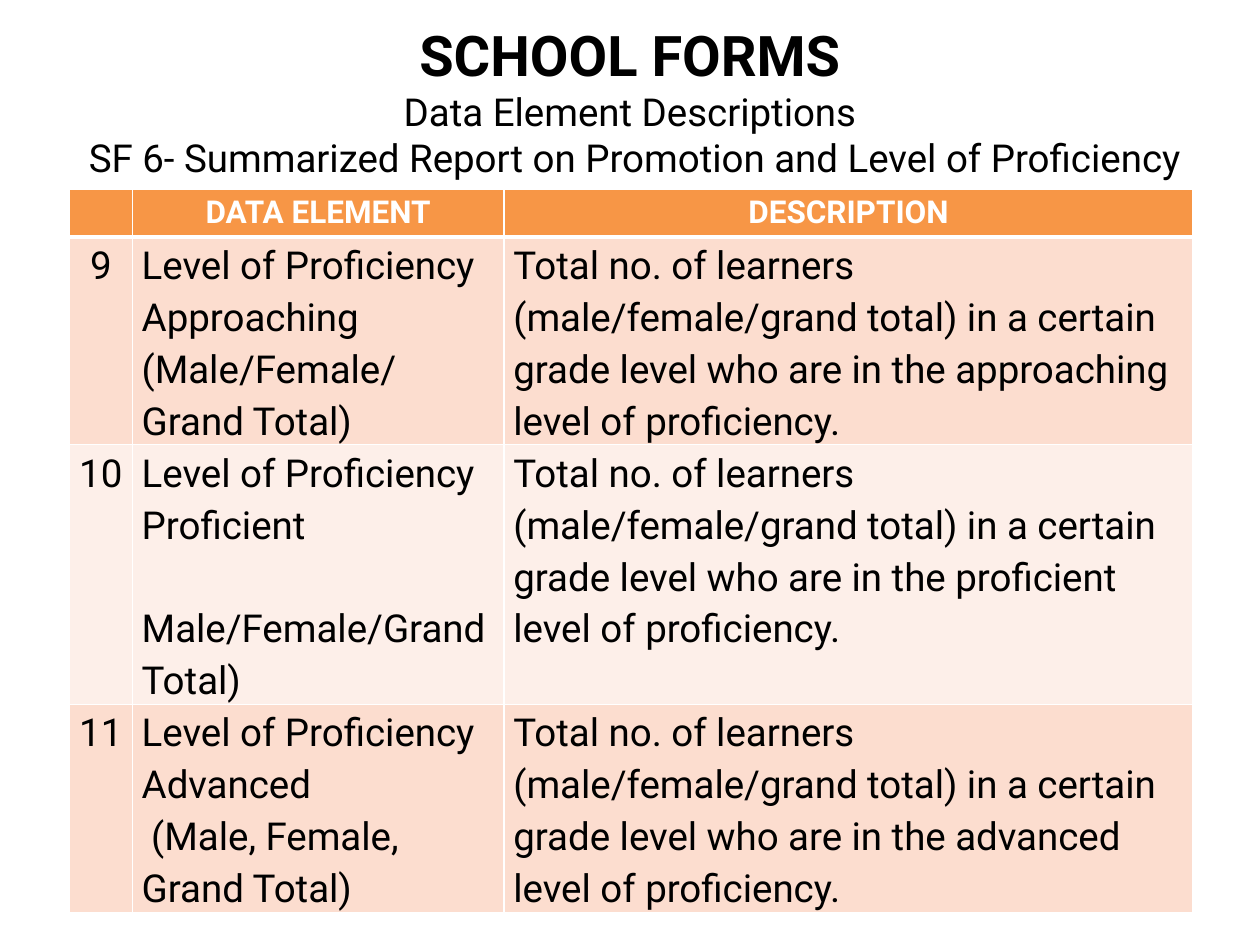
import pptx
import pptx.dml.color
import pptx.enum.text
import pptx.oxml
import pptx.oxml.ns
import pptx.util

Pt = pptx.util.Pt
RGBColor = pptx.dml.color.RGBColor
ALIGN = pptx.enum.text.PP_ALIGN
MIDDLE = pptx.enum.text.MSO_ANCHOR.MIDDLE

FONT = "Roboto"
BLACK = RGBColor(0x00, 0x00, 0x00)
WHITE = RGBColor(0xFF, 0xFF, 0xFF)
ORANGE = RGBColor(0xF7, 0x96, 0x46)
PEACH = RGBColor(0xFC, 0xDD, 0xCF)
PALE_PEACH = RGBColor(0xFD, 0xEF, 0xE9)


def add_span(para, text, size, color, bold=False):
    span = para.add_run()
    span.text = text
    span.font.name = FONT
    span.font.size = Pt(size)
    span.font.bold = bold
    span.font.color.rgb = color


def add_borders(cell, bottom_width):
    """Give the cell white borders; call before setting its fill."""
    properties = cell._tc.get_or_add_tcPr()
    for side, width in (("L", 1), ("R", 1), ("T", 1), ("B", bottom_width)):
        properties.append(pptx.oxml.parse_xml(
            f'<a:ln{side} {pptx.oxml.ns.nsdecls("a")} w="{Pt(width)}">'
            f'<a:solidFill><a:srgbClr val="{WHITE}"/></a:solidFill></a:ln{side}>'))


deck = pptx.Presentation()
deck.slide_width, deck.slide_height = Pt(720), Pt(540)
page = deck.slides.add_slide(deck.slide_layouts[5])

title = page.shapes.title
title.left, title.top, title.width, title.height = Pt(36), Pt(12.24), Pt(648), Pt(90)
title.text_frame.word_wrap = True
title.text_frame.auto_size = pptx.enum.text.MSO_AUTO_SIZE.NONE
title.text_frame.vertical_anchor = MIDDLE
para = title.text_frame.paragraphs[0]
para.alignment = ALIGN.CENTER
add_span(para, "SCHOOL FORMS", 32, BLACK, bold=True)
for line in ("Data Element Descriptions",
             " SF 6- Summarized Report on Promotion and Level of Proficiency"):
    para.add_line_break()
    add_span(para, line, 22, BLACK)

levels = [
    ("9", "Approaching", "(Male/Female/Grand Total)"),
    ("10", "Proficient", "Male/Female/Grand Total)"),
    ("11", "Advanced", " (Male, Female, Grand Total)"),
]
rows = [([], ["DATA ELEMENT"], ["DESCRIPTION"])]
for number, level, groups in levels:
    rows.append((
        [number],
        ["Level of Proficiency", level, groups],
        ["Total no. of learners (male/female/grand total) in a certain grade level "
         f"who are in the {level.lower()} level of proficiency."],
    ))

column_widths = (36, 212.4, 393.84)
row_heights = (27.36, 118, 148, 118)
table = page.shapes.add_table(len(rows), len(column_widths), Pt(39.6), Pt(108),
                              Pt(sum(column_widths)), Pt(sum(row_heights))).table
for column, width in zip(table.columns, column_widths):
    column.width = Pt(width)
for row, height in zip(table.rows, row_heights):
    row.height = Pt(height)

for r, row in enumerate(rows):
    header = r == 0
    for c, lines in enumerate(row):
        cell = table.cell(r, c)
        cell.margin_left = cell.margin_right = Pt(5.4)
        cell.margin_top = cell.margin_bottom = 0
        add_borders(cell, 3 if header else 1)
        cell.fill.solid()
        cell.fill.fore_color.rgb = ORANGE if header else (PALE_PEACH, PEACH)[r % 2]
        for i, line in enumerate(lines):
            para = cell.text_frame.paragraphs[0] if i == 0 else cell.text_frame.add_paragraph()
            para.alignment = ALIGN.CENTER if header or c == 0 else ALIGN.LEFT
            para.line_spacing = 1.15
            add_span(para, line, 18 if header else 22, WHITE if header else BLACK, header)

# The groups of the proficient level stand one line lower.
table.cell(2, 1).text_frame.paragraphs[2].space_before = Pt(29.7)

deck.save("out.pptx")
